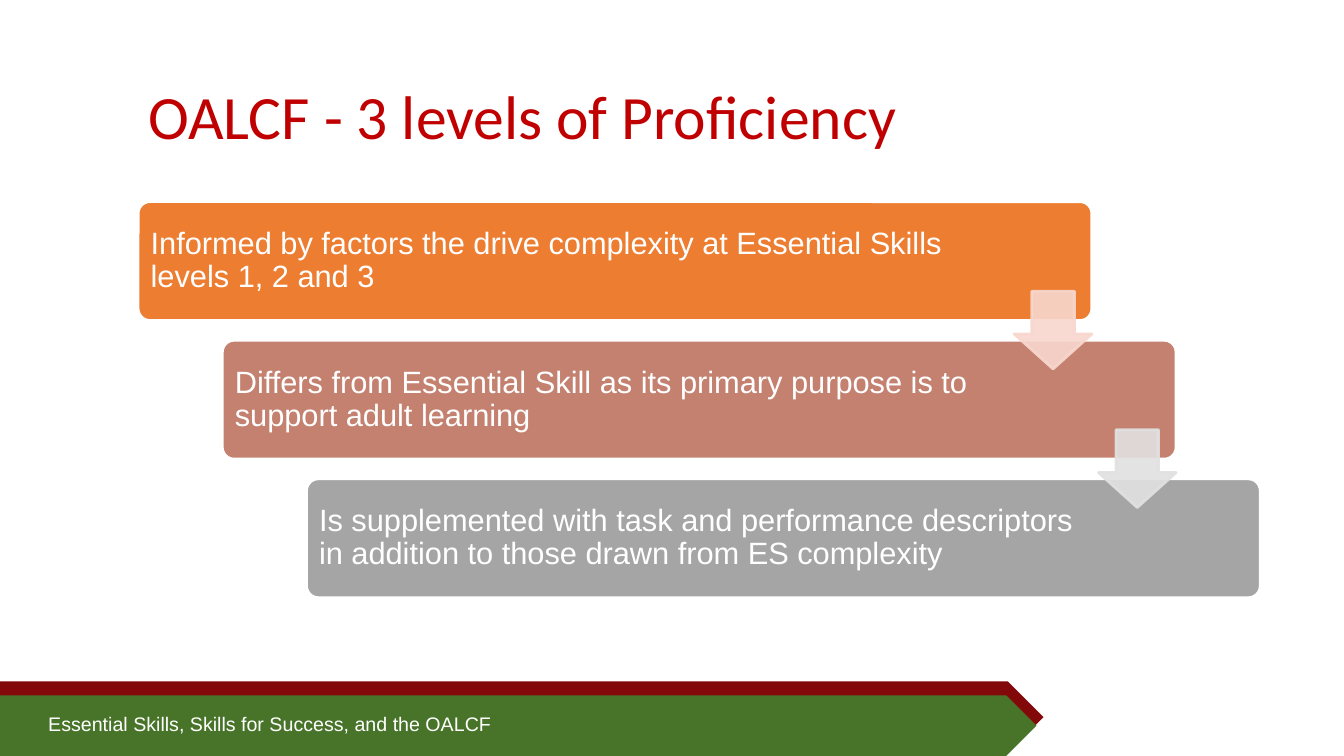
import pptx
import pptx.dml.color
import pptx.enum.shapes
import pptx.enum.text
import pptx.oxml.ns
import pptx.util
from dataclasses import dataclass
from lxml import etree

TITLE = "OALCF - 3 levels of Proficiency"
FOOTER = "Essential Skills, Skills for Success, and the OALCF"
# wording, fill, room kept free on the right (inches)
STEPS = [
    ("Informed by factors the drive complexity at Essential Skills levels 1, 2 and 3",
     "ED7D31", 1.29),
    ("Differs from Essential Skill as its primary purpose is to support adult learning",
     "C48170", 1.69),
    ("Is supplemented with task and performance descriptors in addition to those drawn from ES complexity",
     "A5A5A5", 1.69),
]
ARROW_COLORS = ["F8D7CE", "E1E1E1"]
# left, top, width, height, fill
FOOTER_BANDS = [(0, 6.76, 10.35, 0.71, "82080A"), (0, 6.9, 10.28, 0.6, "487429")]

STEP_LEFT, STEP_TOP = 1.37, 2.0
STEP_WIDTH, STEP_HEIGHT = 9.46, 1.18
SHIFT_X, SHIFT_Y = 0.835, 1.375
ARROW_LEFT, ARROW_TOP, ARROW_SIZE = 10.06, 2.89, 0.77


@dataclass(frozen=True)
class Theme:
    white: str = "FFFFFF"
    title: str = "C00000"
    title_font: str = "Calibri"
    body_font: str = "Arial"
    title_size: int = 44
    step_size: int = 22
    footer_size: int = 14
    outline: int = 2
    arrow_opacity: int = 90


THEME = Theme()
SHAPES = pptx.enum.shapes.MSO_SHAPE
ANCHOR = pptx.enum.text.MSO_ANCHOR
rgb = pptx.dml.color.RGBColor.from_string


def inches(*lengths):
    return [pptx.util.Inches(length) for length in lengths]


def write(shape, text, font, size, color, insets, anchor=ANCHOR.MIDDLE, spacing=None):
    """Fill a shape with one left-aligned run; insets are left, top, right, bottom."""
    frame = shape.text_frame
    frame.word_wrap = True
    frame.vertical_anchor = anchor
    (frame.margin_left, frame.margin_top,
     frame.margin_right, frame.margin_bottom) = inches(*insets)
    para = frame.paragraphs[0]
    para.alignment = pptx.enum.text.PP_ALIGN.LEFT
    if spacing:
        para.line_spacing = spacing
    span = para.add_run()
    span.text = text
    span.font.name = font
    span.font.size = pptx.util.Pt(size)
    span.font.color.rgb = rgb(color)


def add_block(page, kind, box, fill, adjustments, line=None):
    shape = page.shapes.add_shape(kind, *inches(*box))
    shape.shadow.inherit = False
    for index, value in enumerate(adjustments):
        shape.adjustments[index] = value
    shape.fill.solid()
    shape.fill.fore_color.rgb = rgb(fill)
    if line:
        shape.line.color.rgb = rgb(line)
        shape.line.width = pptx.util.Pt(THEME.outline)
    else:
        shape.line.fill.background()
    return shape


def make_translucent(shape, percent):
    for color in shape.element.spPr.iter(pptx.oxml.ns.qn("a:srgbClr")):
        alpha = etree.SubElement(color, pptx.oxml.ns.qn("a:alpha"))
        alpha.set("val", str(percent * 1000))


def add_footer(page):
    for *box, fill in FOOTER_BANDS:
        add_block(page, SHAPES.PENTAGON, box, fill, [0.5])
    label = page.shapes.add_textbox(*inches(0.38, 7.01, 9.27, 0.34))
    write(label, FOOTER, THEME.body_font, THEME.footer_size, THEME.white,
          (0.1, 0.05, 0.1, 0.05), ANCHOR.TOP)


def add_steps(page):
    for index, (text, fill, room) in enumerate(STEPS):
        box = (STEP_LEFT + index * SHIFT_X, STEP_TOP + index * SHIFT_Y,
               STEP_WIDTH, STEP_HEIGHT)
        step = add_block(page, SHAPES.ROUNDED_RECTANGLE, box, fill, [0.1], THEME.white)
        write(step, text, THEME.body_font, THEME.step_size, THEME.white,
              (0.09, 0.09, room, 0.09), spacing=0.9)
    for index, color in enumerate(ARROW_COLORS):
        box = (ARROW_LEFT + index * SHIFT_X, ARROW_TOP + index * SHIFT_Y,
               ARROW_SIZE, ARROW_SIZE)
        arrow = add_block(page, SHAPES.DOWN_ARROW, box, color, [0.55, 0.45], color)
        make_translucent(arrow, THEME.arrow_opacity)


def add_title(page):
    title = page.shapes.add_textbox(*inches(STEP_LEFT, 0.37, 11.13, 1.63))
    write(title, TITLE, THEME.title_font, THEME.title_size, THEME.title,
          (0.1, 0.05, 0.1, 0.05), spacing=0.9)


def main():
    deck = pptx.Presentation()
    deck.slide_width, deck.slide_height = inches(13.33, 7.5)
    page = deck.slides.add_slide(deck.slide_layouts[6])
    add_footer(page)
    add_steps(page)
    add_title(page)
    deck.save("out.pptx")


if __name__ == "__main__":
    main()
